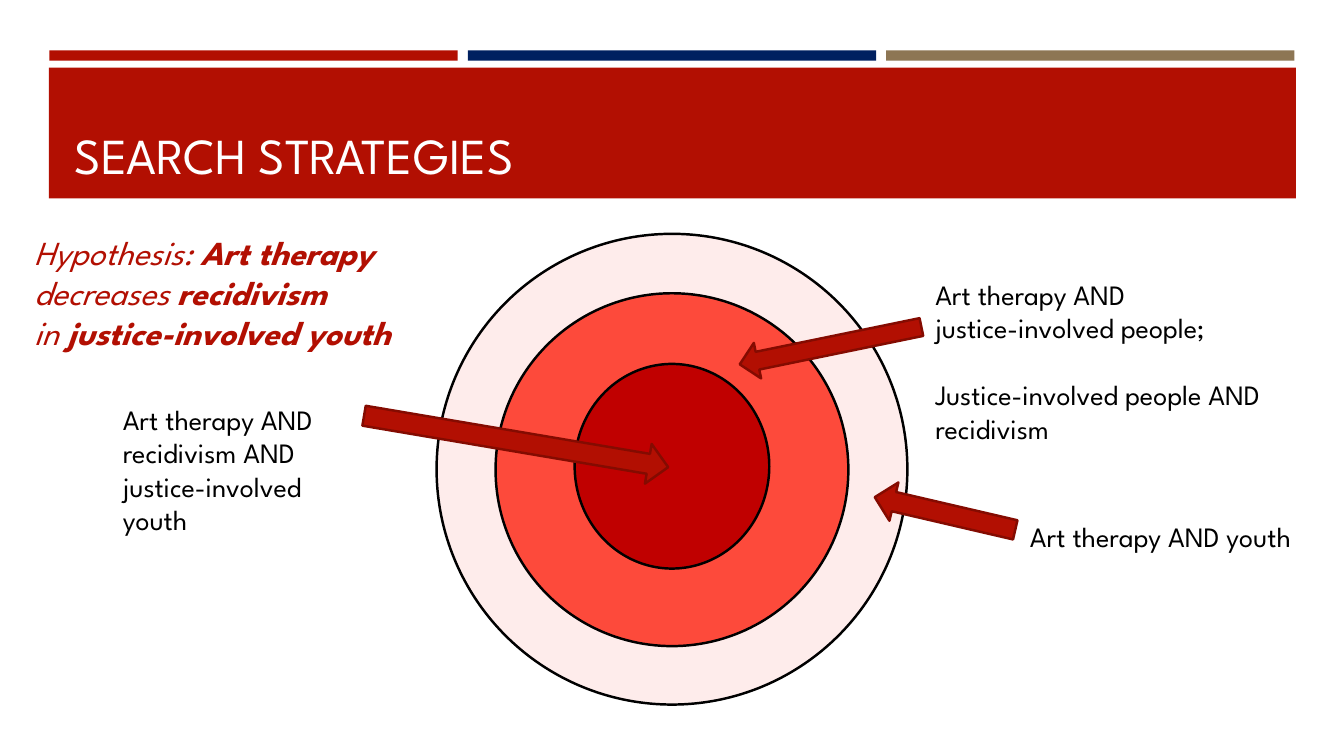
"""Build the search strategies slide with its target diagram."""
from dataclasses import dataclass

from lxml import etree
from pptx import Presentation
from pptx import util as u
from pptx.dml.color import RGBColor
from pptx.enum import shapes, text
from pptx.oxml.ns import qn

RED = RGBColor(0xB2, 0x0F, 0x02)
NAVY = RGBColor(0x00, 0x20, 0x60)
TAN = RGBColor(0x8D, 0x76, 0x54)
PINK = RGBColor(0xFE, 0xC3, 0xBE)
CORAL = RGBColor(0xFD, 0x4A, 0x3B)
CRIMSON = RGBColor(0xC0, 0x00, 0x00)
MAROON = RGBColor(0x84, 0x0B, 0x01)
BLACK = RGBColor(0x00, 0x00, 0x00)
WHITE = RGBColor(0xFF, 0xFF, 0xFF)

FONT = "League Spartan"
WIDTH, HEIGHT = u.Inches(13.333), u.Inches(7.5)
OUTLINE = u.Pt(1.75)
SHAPE = shapes.MSO_SHAPE


@dataclass(frozen=True)
class Box:
    """A rectangle in percent of the slide's width and height."""
    x: float
    y: float
    w: float
    h: float

    def emu(self) -> tuple[int, int, int, int]:
        """Return left, top, width and height in EMU."""
        return (int(WIDTH * self.x / 100), int(HEIGHT * self.y / 100),
                int(WIDTH * self.w / 100), int(HEIGHT * self.h / 100))


@dataclass(frozen=True)
class Ring:
    """One ellipse of the target, placed by its centre height."""
    cy: float
    w: float
    h: float
    fill: RGBColor
    opacity: int = 100


@dataclass(frozen=True)
class Arrow:
    """A rotated block arrow."""
    kind: SHAPE
    box: Box
    angle: float


@dataclass(frozen=True)
class Run:
    """A stretch of text with one weight."""
    words: str
    bold: bool = False


@dataclass(frozen=True)
class Line:
    """A paragraph with the space above it in points."""
    runs: tuple[Run, ...]
    before: float = 0


@dataclass(frozen=True)
class Note:
    """A text box and its type style."""
    box: Box
    lines: tuple[Line, ...]
    size: float = 20
    color: RGBColor = BLACK
    italic: bool = False


BARS = (RED, NAVY, TAN)
BAR, BAR_STEP = Box(3.68, 6.67, 30.38, 1.36), 31.13
BANNER = Box(3.64, 8.93, 92.78, 17.33)
TITLE = Note(Box(4.8, 10.27, 90.45, 14.8),
             (Line((Run("SEARCH STRATEGIES"),)),), 36, WHITE)

RINGS = (
    Ring(62.07, 35.03, 62.27, PINK, 30),
    Ring(62.13, 26.25, 46.67, CORAL),
    Ring(61.67, 14.48, 27.07, CRIMSON),
)

ARROWS = (
    Arrow(SHAPE.RIGHT_ARROW, Box(26.93, 55.73, 22.95, 5.33), 9.6),
    Arrow(SHAPE.LEFT_ARROW, Box(54.9, 43.33, 13.8, 4.8), 348.4),
    Arrow(SHAPE.LEFT_ARROW, Box(64.95, 65.33, 10.73, 5.2), 13.1),
)

NOTES = (
    Note(Box(8.4, 52.53, 18.23, 19.33), (
        Line((Run("Art therapy AND recidivism AND justice-involved youth"),)),)),
    Note(Box(68.85, 36, 31.15, 27.87), (
        Line((Run("Art therapy AND"),)),
        Line((Run("justice-involved people;"),)),
        Line((Run("Justice-involved people AND"),), 24),
        Line((Run("recidivism"),)))),
    Note(Box(75.9, 68, 24.1, 5.87), (Line((Run("Art therapy AND youth"),)),)),
    Note(Box(1.8, 30, 42.83, 17.47), (
        Line((Run("Hypothesis: "), Run("Art therapy", True))),
        Line((Run("decreases "), Run("recidivism", True))),
        Line((Run("in "), Run("justice-involved youth", True)))), 24, RED, True),
)


def add_block(parent, kind: SHAPE, box: Box, fill: RGBColor,
              line: RGBColor | None = None):
    """Add a flat preset shape, outlined when a line colour is given."""
    sp = parent.add_shape(kind, *box.emu())
    sp.shadow.inherit = False
    sp.fill.solid()
    sp.fill.fore_color.rgb = fill
    if line is None:
        sp.line.fill.background()
    else:
        sp.line.color.rgb = line
        sp.line.width = OUTLINE
    return sp


def add_ring(parent, ring: Ring) -> None:
    """Add one ring centred on the slide's width."""
    box = Box(50 - ring.w / 2, ring.cy - ring.h / 2, ring.w, ring.h)
    sp = add_block(parent, SHAPE.OVAL, box, ring.fill, BLACK)
    if ring.opacity < 100:
        color = sp.fill._xPr.find(qn("a:solidFill"))[0]
        etree.SubElement(color, qn("a:alpha"), val=str(ring.opacity * 1000))


def write(tf, note: Note) -> None:
    """Write the note's paragraphs run by run."""
    tf.word_wrap = True
    for i, line in enumerate(note.lines):
        p = tf.add_paragraph() if i else tf.paragraphs[0]
        p.alignment = text.PP_ALIGN.LEFT
        p.space_before = u.Pt(line.before)
        for run in line.runs:
            r = p.add_run()
            r.text = run.words
            r.font.name = FONT
            r.font.size = u.Pt(note.size)
            r.font.color.rgb = note.color
            r.font.bold = run.bold
            r.font.italic = note.italic


def main() -> None:
    """Build and save the slide."""
    prs = Presentation()
    prs.slide_width, prs.slide_height = WIDTH, HEIGHT
    s = prs.slides.add_slide(prs.slide_layouts.get_by_name("Title Only"))

    for i, color in enumerate(BARS):
        box = Box(BAR.x + i * BAR_STEP, BAR.y, BAR.w, BAR.h)
        add_block(s.shapes, SHAPE.RECTANGLE, box, color)
    banner = add_block(s.shapes, SHAPE.RECTANGLE, BANNER, RED)

    title = s.shapes.title
    title.left, title.top, title.width, title.height = TITLE.box.emu()
    title.text_frame.auto_size = text.MSO_AUTO_SIZE.NONE
    title.text_frame.vertical_anchor = text.MSO_ANCHOR.BOTTOM
    write(title.text_frame, TITLE)
    banner._element.addnext(title._element)

    target = s.shapes.add_group_shape()
    for ring in RINGS:
        add_ring(target.shapes, ring)
    for arrow in ARROWS:
        sp = add_block(s.shapes, arrow.kind, arrow.box, RED, MAROON)
        sp.rotation = arrow.angle
    for note in NOTES:
        write(s.shapes.add_textbox(*note.box.emu()).text_frame, note)

    prs.save("out.pptx")


if __name__ == "__main__":
    main()
